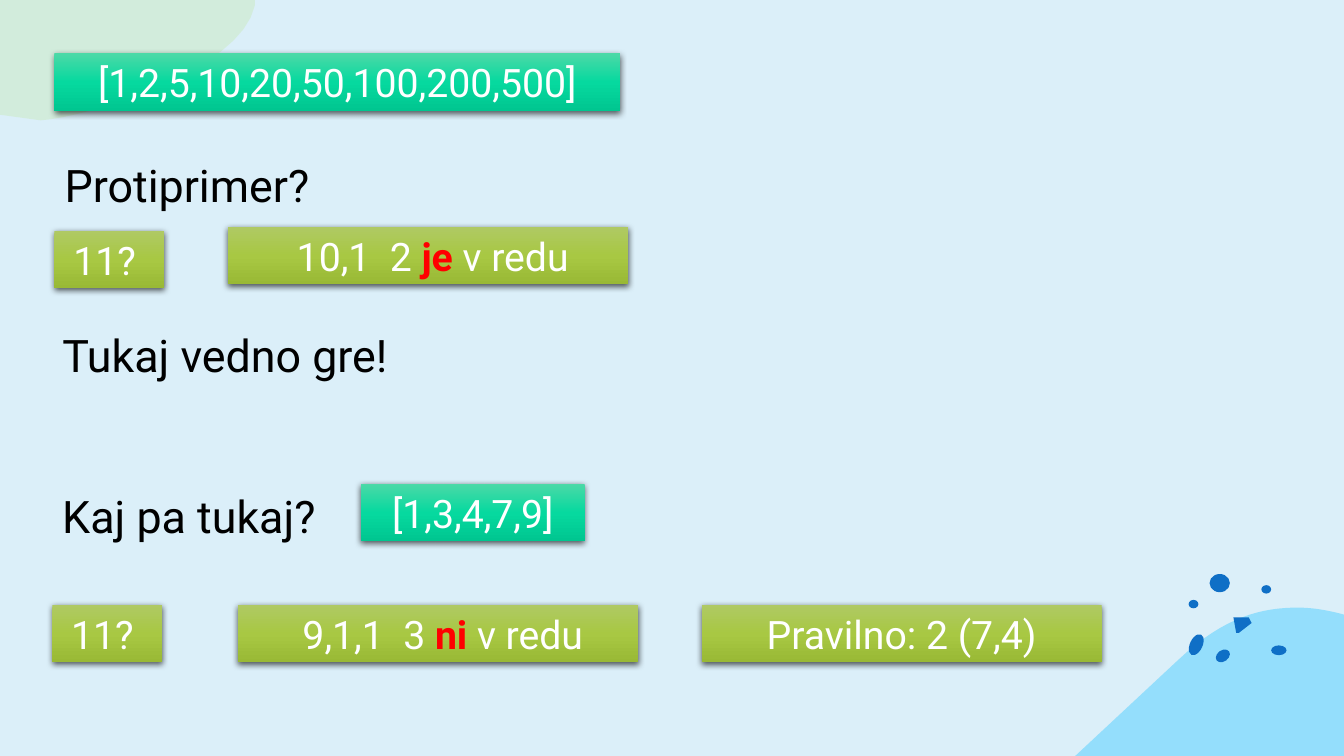
from copy import deepcopy
from dataclasses import dataclass

import lxml.etree
import pptx
import pptx.dml.color
import pptx.enum.shapes
import pptx.enum.text
import pptx.oxml.ns
import pptx.shapes.autoshape
import pptx.slide
import pptx.text.text
import pptx.util

Pt = pptx.util.Pt
qn = pptx.oxml.ns.qn
Point = tuple[float, float]

FONT = "Roboto"
COLORS = {
    "background": "DBEFF9",
    "hill": "4FCEFF",
    "dot": "0F6FC6",
    "leaf": "CBEAC0",
    "black": "000000",
    "white": "FFFFFF",
    "verdict": "FF0000",
}
GRADIENTS = {
    "coins": ("4CD9A7", "06D99F", "00C690"),
    "answer": ("AFC964", "A8C843", "99B935"),
}
WIDTH, HEIGHT = 960, 540
BOX_HEIGHT = 41
HEADING_HEIGHT = 59
SHORT_BOX, LONG_BOX = 78.5, 285.8
BOTTOM_ROW = 432
CURVE_STEPS = 16


@dataclass(frozen=True)
class Blob:
    color: str
    segments: tuple[tuple[float, ...], ...]
    opacity: int = 100


@dataclass(frozen=True)
class Dot:
    left: float
    top: float
    width: float
    height: float
    rotation: float = 0


@dataclass(frozen=True)
class Box:
    left: float
    top: float
    width: float
    gradient: str
    text: str
    verdict: str = ""
    ending: str = ""


@dataclass(frozen=True)
class Heading:
    left: float
    top: float
    width: float
    text: str
    is_title: bool = False


BLOBS = (
    Blob("hill", ((768, HEIGHT), (842, 471), (875, 440, 902, 434, 927, 434),
                  (938, 434, 949, 436, WIDTH, 439), (WIDTH, HEIGHT)), 50),
    Blob("leaf", ((0, 0), (182, 0), (182, 4), (172, 51, 61, 84, 29, 86), (0, 82)), 50),
    Blob("dot", ((881, 441), (892, 441), (894, 445), (885, 452), (883, 452))),
)
DOTS = (
    Dot(868, 464.5, 11, 8, -35),
    Dot(850, 452.5, 9, 16, 25),
    Dot(908, 461, 11, 7),
    Dot(864, 410, 14.5, 13),
    Dot(901, 418, 7, 6),
    Dot(849, 428.5, 7, 6),
)
BOXES = (
    Box(38.9, 164.9, SHORT_BOX, "answer", "11? "),
    Box(162.7, 162, LONG_BOX, "answer", " 10,1  2 ", "je", " v redu"),
    Box(257.8, 345.6, 159.8, "coins", "[1,3,4,7,9]"),
    Box(37.4, BOTTOM_ROW, SHORT_BOX, "answer", "11? "),
    Box(169.9, BOTTOM_ROW, LONG_BOX, "answer", " 9,1,1  3 ", "ni", " v redu"),
    Box(501.1, BOTTOM_ROW, LONG_BOX, "answer", "Pravilno: 2 (7,4)"),
    Box(38.9, 38.2, 403.9, "coins", "[1,2,5,10,20,50,100,200,500]"),
)
HEADINGS = (
    Heading(38.9, 100.8, 275, "Protiprimer?", is_title=True),
    Heading(37.4, 221.8, 380.2, "Tukaj vedno gre!"),
    Heading(37.4, 337, 199.4, "Kaj pa tukaj?"),
)


def rgb(name: str) -> pptx.dml.color.RGBColor:
    return pptx.dml.color.RGBColor.from_string(COLORS[name])


def outline(blob: Blob) -> list[Point]:
    points: list[Point] = []
    for segment in blob.segments:
        if len(segment) == 2:
            points.append((segment[0], segment[1]))
            continue
        controls = (points[-1], segment[:2], segment[2:4], segment[4:])
        for step in range(1, CURVE_STEPS + 1):
            t = step / CURVE_STEPS
            weights = ((1 - t) ** 3, 3 * t * (1 - t) ** 2, 3 * t * t * (1 - t), t ** 3)
            x, y = (sum(w * c[axis] for w, c in zip(weights, controls)) for axis in (0, 1))
            points.append((x, y))
    return points


def fill_plain(shape: pptx.shapes.autoshape.Shape, color: str) -> None:
    shape.shadow.inherit = False
    shape.fill.solid()
    shape.fill.fore_color.rgb = rgb(color)
    shape.line.fill.background()


def add_blob(slide: pptx.slide.Slide, blob: Blob) -> None:
    points = [(Pt(x), Pt(y)) for x, y in outline(blob)]
    builder = slide.shapes.build_freeform(*points[0])
    builder.add_line_segments(points[1:], close=True)
    shape = builder.convert_to_shape()
    fill_plain(shape, blob.color)
    if blob.opacity < 100:
        color = shape.element.spPr.find(f"{qn('a:solidFill')}/{qn('a:srgbClr')}")
        lxml.etree.SubElement(color, qn("a:alpha"), val=str(blob.opacity * 1000))


def add_dot(slide: pptx.slide.Slide, dot: Dot) -> None:
    shape = slide.shapes.add_shape(
        pptx.enum.shapes.MSO_SHAPE.OVAL,
        Pt(dot.left), Pt(dot.top), Pt(dot.width), Pt(dot.height))
    shape.rotation = dot.rotation
    fill_plain(shape, "dot")


def add_run(paragraph: pptx.text.text._Paragraph, text: str, size: float,
            color: str, bold: bool = False) -> None:
    run = paragraph.add_run()
    run.text = text
    run.font.name = FONT
    run.font.size = Pt(size)
    run.font.bold = bold
    run.font.color.rgb = rgb(color)


def fill_gradient(shape: pptx.shapes.autoshape.Shape, colors: tuple[str, ...]) -> None:
    shape.fill.gradient()
    shape.fill.gradient_angle = 270
    stop_list = shape.element.spPr.find(f".//{qn('a:gsLst')}")
    stop_list.insert(1, deepcopy(stop_list[0]))
    for index, (stop, color) in enumerate(zip(shape.fill.gradient_stops, colors)):
        stop.position = index / (len(colors) - 1)
        stop.color.rgb = pptx.dml.color.RGBColor.from_string(color)


def add_shadow(shape: pptx.shapes.autoshape.Shape) -> None:
    shape.shadow.inherit = False
    effects = shape.element.spPr.find(qn("a:effectLst"))
    shadow = lxml.etree.SubElement(
        effects, qn("a:outerShdw"), blurRad=str(Pt(4.5)), dist=str(Pt(1.5)),
        dir="5400000", algn="ctr", rotWithShape="0")
    color = lxml.etree.SubElement(shadow, qn("a:srgbClr"), val=COLORS["black"])
    lxml.etree.SubElement(color, qn("a:alpha"), val="63000")


def add_box(slide: pptx.slide.Slide, box: Box) -> None:
    shape = slide.shapes.add_shape(
        pptx.enum.shapes.MSO_SHAPE.RECTANGLE,
        Pt(box.left), Pt(box.top), Pt(box.width), Pt(BOX_HEIGHT))
    fill_gradient(shape, GRADIENTS[box.gradient])
    shape.line.fill.background()
    add_shadow(shape)
    frame = shape.text_frame
    frame.word_wrap = True
    frame.auto_size = pptx.enum.text.MSO_AUTO_SIZE.SHAPE_TO_FIT_TEXT
    frame.vertical_anchor = pptx.enum.text.MSO_ANCHOR.MIDDLE
    paragraph = frame.paragraphs[0]
    paragraph.alignment = pptx.enum.text.PP_ALIGN.CENTER
    add_run(paragraph, box.text, 28, "white")
    if box.verdict:
        add_run(paragraph, box.verdict, 28, "verdict", bold=True)
        add_run(paragraph, box.ending, 28, "white")


def add_heading(slide: pptx.slide.Slide, heading: Heading) -> None:
    place = (Pt(heading.left), Pt(heading.top), Pt(heading.width), Pt(HEADING_HEIGHT))
    shape = slide.shapes.title if heading.is_title else slide.shapes.add_textbox(*place)
    shape.left, shape.top, shape.width, shape.height = place
    frame = shape.text_frame
    frame.word_wrap = True
    frame.auto_size = pptx.enum.text.MSO_AUTO_SIZE.NONE
    frame.vertical_anchor = pptx.enum.text.MSO_ANCHOR.MIDDLE
    paragraph = frame.paragraphs[0]
    paragraph.alignment = pptx.enum.text.PP_ALIGN.LEFT
    paragraph.line_spacing = 1.1
    paragraph.space_before = Pt(10)
    add_run(paragraph, heading.text, 32, "black")


def main() -> None:
    presentation = pptx.Presentation()
    presentation.slide_width, presentation.slide_height = Pt(WIDTH), Pt(HEIGHT)
    slide = presentation.slides.add_slide(presentation.slide_layouts[5])
    slide.background.fill.solid()
    slide.background.fill.fore_color.rgb = rgb("background")
    for items, draw in ((BLOBS, add_blob), (DOTS, add_dot),
                        (BOXES, add_box), (HEADINGS, add_heading)):
        for item in items:
            draw(slide, item)
    presentation.save("out.pptx")


if __name__ == "__main__":
    main()
